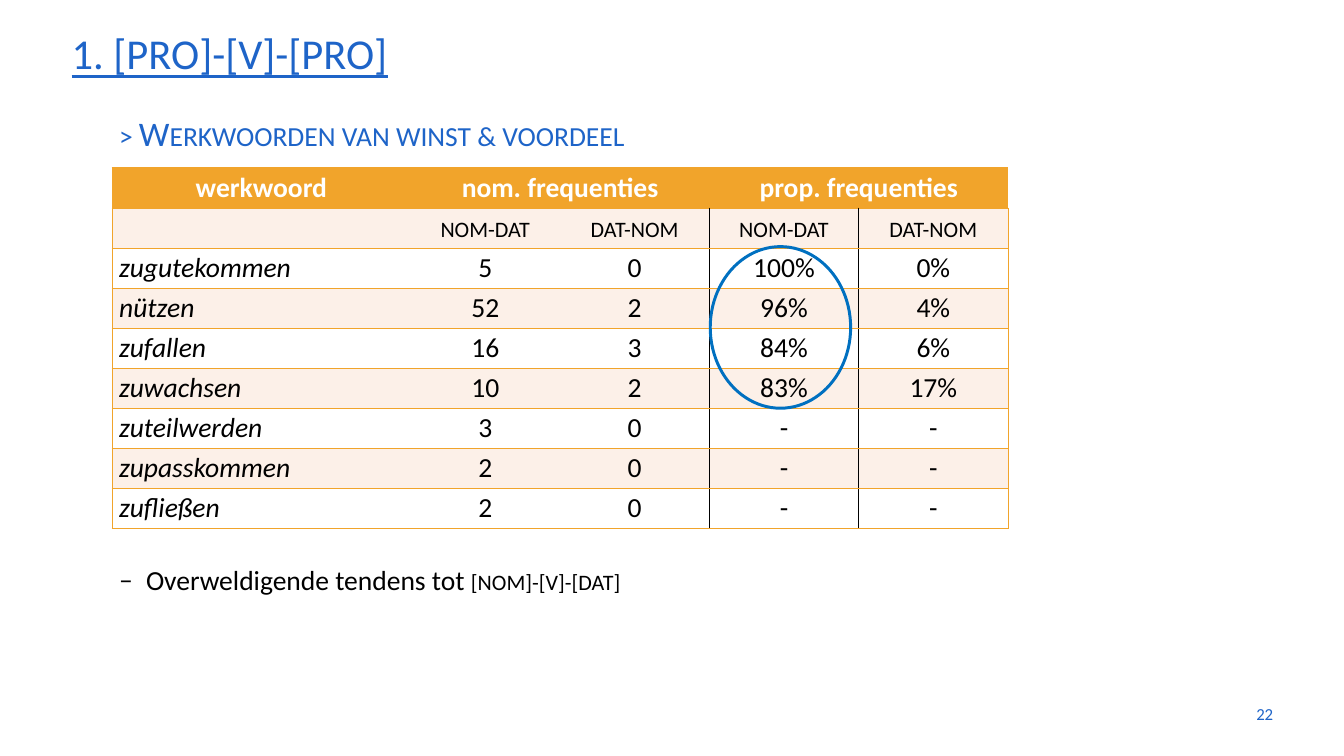
from lxml import etree
from pptx import Presentation
from pptx.dml.color import RGBColor
from pptx.enum.shapes import MSO_SHAPE
from pptx.enum.text import MSO_ANCHOR, MSO_AUTO_SIZE, PP_ALIGN
from pptx.oxml.ns import qn
from pptx.util import Pt

BLUE = RGBColor(0x1E, 0x64, 0xC8)
RING_BLUE = RGBColor(0x00, 0x70, 0xC0)
ORANGE = RGBColor(0xF1, 0xA4, 0x2B)
PEACH = RGBColor(0xFC, 0xF0, 0xE8)
WHITE = RGBColor(0xFF, 0xFF, 0xFF)
BLACK = RGBColor(0x00, 0x00, 0x00)
LEFT, CENTER, RIGHT = PP_ALIGN.LEFT, PP_ALIGN.CENTER, PP_ALIGN.RIGHT
TOP, MIDDLE = MSO_ANCHOR.TOP, MSO_ANCHOR.MIDDLE
NO_AUTOFIT = MSO_AUTO_SIZE.NONE
ELLIPSE = MSO_SHAPE.OVAL


def style_span(span, size, color, small_caps=False):
    span.font.name = "Calibri"
    span.font.size = Pt(size)
    span.font.color.rgb = color
    if small_caps:
        span._r.get_or_add_rPr().set("cap", "small")


def set_borders(cell, colors):
    properties = cell._tc.get_or_add_tcPr()
    for index, side in enumerate(("lnL", "lnR", "lnT", "lnB")):
        line = etree.Element(qn(f"a:{side}"), w=str(Pt(1)))
        color = colors[index]
        if color is None:
            etree.SubElement(line, qn("a:noFill"))
        else:
            fill = etree.SubElement(line, qn("a:solidFill"))
            etree.SubElement(fill, qn("a:srgbClr"), val=str(color))
        properties.insert(index, line)


deck = Presentation()
deck.slide_width, deck.slide_height = Pt(1365.12), Pt(768.24)
page = deck.slides.add_slide(deck.slide_layouts[5])

title = page.shapes.title
title.left, title.top, title.width, title.height = Pt(65.5), Pt(20.2), Pt(1237), Pt(67.7)
title.text_frame.text = "1. [pro]-[v]-[pro]"
title.text_frame.auto_size = NO_AUTOFIT
title.text_frame.vertical_anchor = TOP
para = title.text_frame.paragraphs[0]
para.alignment = LEFT
para.line_spacing = 0.9
style_span(para.runs[0], 54, BLUE, True)
para.runs[0].font.underline = True

text_boxes = [
    ((1227.6, 704.9, 72.7, 41), MIDDLE, RIGHT, 1.0, 17.1, BLUE, [("22", False)]),
    ((113.8, 102.2, 668.2, 54), TOP, LEFT, 1.2, 35, BLUE,
     [("> Werkwoorden van winst & voordeel", True)]),
    ((113.8, 552.2, 951.1, 51.8), TOP, LEFT, 1.5, 28, BLACK,
     [("Overweldigende tendens tot ", False), ("[nom]-[v]-[dat]", True)]),
]
for place, anchor, alignment, spacing, size, color, pieces in text_boxes:
    box = page.shapes.add_textbox(*[Pt(length) for length in place])
    box.text_frame.word_wrap = True
    box.text_frame.vertical_anchor = anchor
    para = box.text_frame.paragraphs[0]
    para.alignment = alignment
    para.line_spacing = spacing
    for text, small_caps in pieces:
        span = para.add_run()
        span.text = text
        style_span(span, size, color, small_caps)

conclusion = para._p.get_or_add_pPr()
conclusion.set("marL", str(Pt(27.4)))
conclusion.set("indent", str(Pt(-27.4)))
etree.SubElement(conclusion, qn("a:buFont"), typeface="Calibri")
etree.SubElement(conclusion, qn("a:buChar"), char="–")

rows = [
    ("werkwoord", "nom. frequenties", "", "prop. frequenties", ""),
    ("", "nom-dat", "dat-nom", "nom-dat", "dat-nom"),
    ("zugutekommen", "5", "0", "100%", "0%"),
    ("nützen", "52", "2", "96%", "4%"),
    ("zufallen", "16", "3", "84%", "6%"),
    ("zuwachsen", "10", "2", "83%", "17%"),
    ("zuteilwerden", "3", "0", "-", "-"),
    ("zupasskommen", "2", "0", "-", "-"),
    ("zufließen", "2", "0", "-", "-"),
]
row_height = 40.75
column_widths = [303.3] + [151.7] * 4
table = page.shapes.add_table(
    len(rows), len(column_widths), Pt(113.8), Pt(170.6),
    Pt(sum(column_widths)), Pt(row_height * len(rows))).table
for column, width in zip(table.columns, column_widths):
    column.width = Pt(width)
for first in (1, 3):
    table.cell(0, first).merge(table.cell(0, first + 1))

for r, row in enumerate(rows):
    table.rows[r].height = Pt(row_height)
    for c, text in enumerate(row):
        cell = table.cell(r, c)
        cell.margin_top = cell.margin_bottom = Pt(3.25)
        cell.fill.solid()
        cell.fill.fore_color.rgb = ORANGE if r == 0 else PEACH if r % 2 else WHITE
        divider = BLACK if r > 0 else None
        left = ORANGE if c == 0 else divider if c > 2 else None
        right = ORANGE if c == 4 else divider if c > 1 else None
        set_borders(cell, (left, right, ORANGE, ORANGE))
        if text:
            cell.text_frame.text = text
            para = cell.text_frame.paragraphs[0]
            para.alignment = LEFT if r > 1 and c == 0 else CENTER
            span = para.runs[0]
            style_span(span, 28, WHITE if r == 0 else BLACK, r == 1)
            span.font.bold = r == 0
            span.font.italic = r > 1 and c == 0

ring = page.shapes.add_shape(ELLIPSE, Pt(721.4), Pt(250.6), Pt(142.6), Pt(164.2))
ring.shadow.inherit = False
ring.fill.background()
ring.line.color.rgb = RING_BLUE
ring.line.width = Pt(3)

deck.save("out.pptx")
